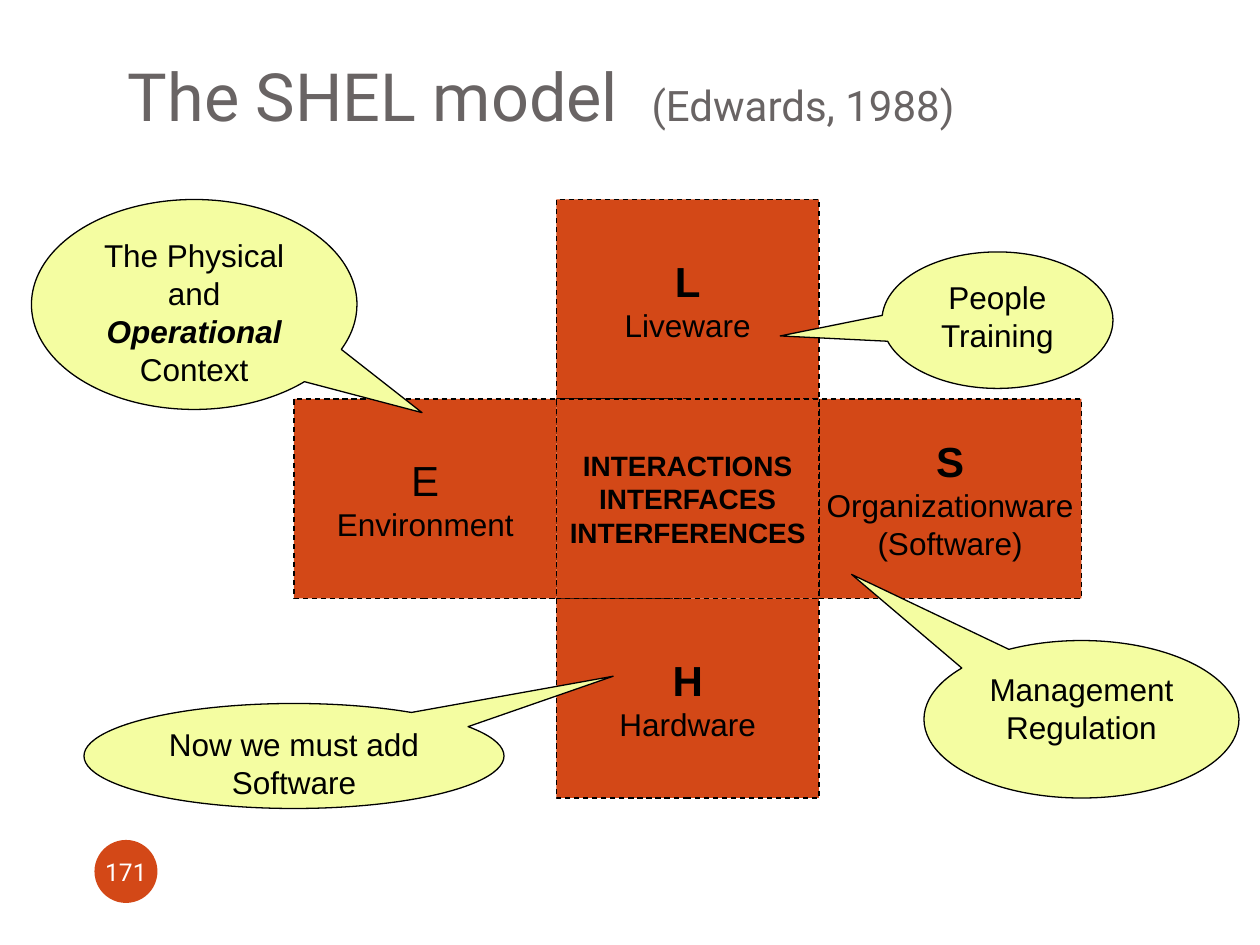
from dataclasses import dataclass
from pptx import Presentation
from pptx.dml.color import RGBColor
from pptx.enum.dml import MSO_LINE
from pptx.enum.shapes import MSO_SHAPE as Preset
from pptx.enum.text import MSO_ANCHOR as Anchor, PP_ALIGN as Align
from pptx.util import Pt


@dataclass(frozen=True)
class Theme:
    box: str = "D34817"
    callout: str = "F4FDA1"
    ink: str = "000000"
    heading: str = "696464"
    light: str = "FFFFFF"
    heading_font: str = "Roboto"
    body_font: str = "Arial"
    title: int = 38
    letter: int = 24
    body: int = 18
    center: int = 16
    number: int = 14
    outline: float = 0.75


THEME = Theme()
SCALE = 7620
SLIDE = (1200, 900)

TITLE = [("The SHEL model  ", THEME.title, ""), ("(Edwards, 1988)", THEME.letter, "")]
TITLE_BOX = (110, 0, 1020, 140)
PAGE_NUMBER = "171"
PAGE_BOX = (90, 800, 60, 60)

BOX_SIZE = (250, 190)
CROSS_ORIGIN = (280, 190)
COMPONENTS = [
    (1, 0, "L", "b", ["Liveware"]),
    (1, 2, "H", "b", ["Hardware"]),
    (0, 1, "E", "", ["Environment"]),
    (2, 1, "S", "b", ["Organizationware", "(Software)"]),
]
CENTER = ["INTERACTIONS", "INTERFACES", "INTERFERENCES"]

CALLOUTS = [
    ((880, 610, 300, 150), (811, 547), [[("Management", "")], [("Regulation", "")]]),
    ((30, 190, 310, 200), (402, 393),
     [[("The Physical and ", ""), ("Operational ", "bi"), ("Context", "")]]),
    ((80, 670, 400, 100), (584, 644), [[("Now we must add Software", "")]]),
    ((840, 240, 220, 130), (743, 320), [[("People", "")], [("Training", "")]]),
]


def px(*lengths):
    return [length * SCALE for length in lengths]


def write(shape, paragraphs, font, color, align, anchor, wrap, insets=(12, 6, 12, 6)):
    frame = shape.text_frame
    frame.word_wrap = wrap
    frame.vertical_anchor = anchor
    (frame.margin_left, frame.margin_top,
     frame.margin_right, frame.margin_bottom) = px(*insets)
    for index, pieces in enumerate(paragraphs):
        paragraph = frame.add_paragraph() if index else frame.paragraphs[0]
        paragraph.alignment = align
        for text, size, style in pieces:
            run = paragraph.add_run()
            run.text = text
            run.font.name = font
            run.font.size = Pt(size)
            run.font.bold = "b" in style
            run.font.italic = "i" in style
            run.font.color.rgb = RGBColor.from_string(color)


def add_filled(slide, preset, bounds, fill, outlined=True):
    shape = slide.shapes.add_shape(preset, *px(*bounds))
    shape.shadow.inherit = False
    shape.fill.solid()
    shape.fill.fore_color.rgb = RGBColor.from_string(fill)
    if outlined:
        shape.line.color.rgb = RGBColor.from_string(THEME.ink)
        shape.line.width = Pt(THEME.outline)
    else:
        shape.line.fill.background()
    return shape


def add_box(slide, column, row, paragraphs):
    width, height = BOX_SIZE
    left, top = CROSS_ORIGIN
    bounds = (left + column * width, top + row * height, width, height)
    box = add_filled(slide, Preset.RECTANGLE, bounds, THEME.box)
    box.line.dash_style = MSO_LINE.DASH
    write(box, paragraphs, THEME.body_font, THEME.ink, Align.CENTER, Anchor.MIDDLE, False)


def add_callout(slide, bounds, tip, paragraphs):
    left, top, width, height = bounds
    callout = add_filled(slide, Preset.OVAL_CALLOUT, bounds, THEME.callout)
    callout.adjustments[0] = (tip[0] - left) / width - 0.5
    callout.adjustments[1] = (tip[1] - top) / height - 0.5
    sized = [[(text, THEME.body, style) for text, style in pieces] for pieces in paragraphs]
    write(callout, sized, THEME.body_font, THEME.ink, Align.CENTER, Anchor.TOP, True)


def main():
    deck = Presentation()
    deck.slide_width, deck.slide_height = px(*SLIDE)
    slide = deck.slides.add_slide(deck.slide_layouts[6])

    title = slide.shapes.add_textbox(*px(*TITLE_BOX))
    write(title, [TITLE], THEME.heading_font, THEME.heading,
          Align.LEFT, Anchor.BOTTOM, True, (12, 6, 12, 12))

    badge = add_filled(slide, Preset.OVAL, PAGE_BOX, THEME.box, outlined=False)
    write(badge, [[(PAGE_NUMBER, THEME.number, "")]], THEME.heading_font, THEME.light,
          Align.CENTER, Anchor.MIDDLE, False, (0, 0, 0, 0))

    for column, row, letter, style, names in COMPONENTS:
        add_box(slide, column, row, [[(letter, THEME.letter, style)]]
                + [[(name, THEME.body, "")] for name in names])
    add_box(slide, 1, 1, [[(word, THEME.center, "b")] for word in CENTER])

    for bounds, tip, paragraphs in CALLOUTS:
        add_callout(slide, bounds, tip, paragraphs)

    deck.save("out.pptx")


if __name__ == "__main__":
    main()
